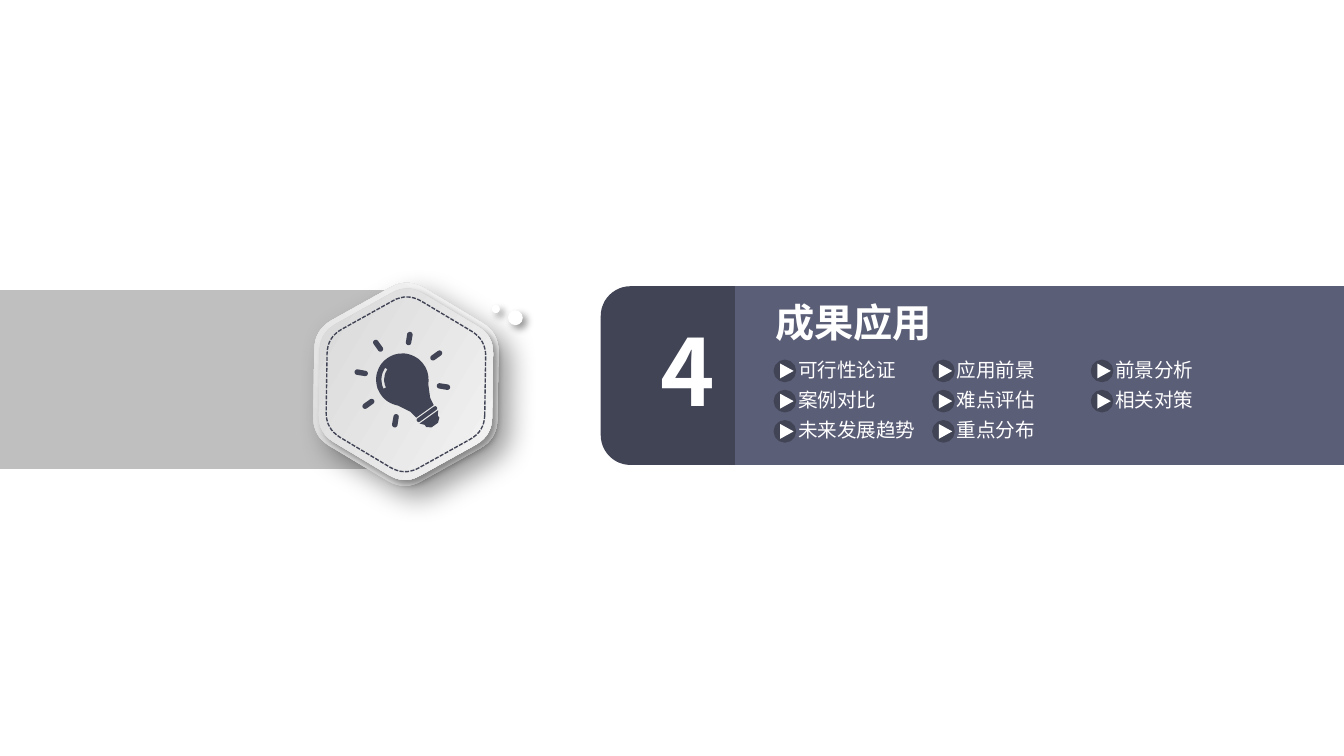
"""Build the section slide with a bulb badge and a numbered topic banner."""
import math
import lxml.etree
import pptx
import pptx.dml.color
import pptx.enum.dml
import pptx.enum.shapes
import pptx.enum.text
import pptx.oxml.ns
import pptx.util
from dataclasses import dataclass

Inches = pptx.util.Inches
Pt = pptx.util.Pt
SHAPE = pptx.enum.shapes.MSO_SHAPE
qn = pptx.oxml.ns.qn


@dataclass(frozen=True)
class Theme:
    font: str = "Noto Sans CJK SC"
    white: str = "FFFFFF"
    grey: str = "BFBFBF"
    dark: str = "414455"
    slate: str = "5B5E77"
    shade: tuple = ("D3D3D3", "F9F9F9")
    shadow: str = "000000"
    number: float = 49.5
    title: float = 21
    body: float = 10.5


def rgb(value):
    return pptx.dml.color.RGBColor.from_string(value)


def arc(cx, cy, radius, start, end, steps=12):
    angles = [math.radians(start + (end - start) * i / steps) for i in range(steps + 1)]
    return [(cx + radius * math.cos(a), cy + radius * math.sin(a)) for a in angles]


def capsule(cx, cy, length, width, angle):
    half = (length - width) / 2
    dx, dy = half * math.cos(math.radians(angle)), half * math.sin(math.radians(angle))
    return (arc(cx + dx, cy + dy, width / 2, angle - 90, angle + 90)
            + arc(cx - dx, cy - dy, width / 2, angle + 90, angle + 270))


def rounded_hexagon(height, trim=0.18, steps=8):
    corners = arc(0, 0, height / math.sqrt(3), 0, 300, 5)
    points = []
    for i, corner in enumerate(corners):
        before, after = corners[i - 1], corners[(i + 1) % 6]
        a, b = ([c + trim * (n - c) for c, n in zip(corner, near)] for near in (before, after))
        for t in (k / steps for k in range(steps + 1)):
            points.append(tuple((1 - t) ** 2 * p + 2 * t * (1 - t) * c + t * t * q
                                for p, c, q in zip(a, corner, b)))
    return points


def bulb():
    y = -0.03
    glass = arc(0, y, 0.195, 135, 405, 48) + [(0.09, 0.2), (0.08, 0.26), (-0.08, 0.26), (-0.09, 0.2)]
    glint = arc(0, y, 0.155, 190, 250) + arc(0, y, 0.135, 250, 190)
    cap = [(-0.085, 0.31), (0.085, 0.31), (0.06, 0.34), (0.06, 0.36),
           (0.03, 0.385), (-0.03, 0.385), (-0.06, 0.36), (-0.06, 0.34)]
    rays = [capsule(*arc(0, y, 0.31, a, a, 1)[0], 0.1, 0.04, a) for a in range(135, 406, 45)]
    return [glass, glint, capsule(0, 0.285, 0.18, 0.03, 0), cap, *rays]


class Deck:
    def __init__(self, prs, theme):
        self.theme = theme
        self.s = prs.slides.add_slide(prs.slide_layouts[6])

    def paint(self, sp, fill=None, line=None, shadow=None, rotation=0, dash=None):
        sp.rotation = rotation
        if fill:
            sp.fill.solid()
            sp.fill.fore_color.rgb = rgb(fill)
        else:
            sp.fill.background()
        if line:
            sp.line.color.rgb = rgb(line[0])
            sp.line.width = Pt(line[1])
            sp.line.dash_style = dash
        else:
            sp.line.fill.background()
        sp.shadow.inherit = False
        if shadow:
            self.cast(sp, *shadow)
        return sp

    def cast(self, sp, blur, distance):
        effects = sp._element.spPr.find(qn("a:effectLst"))
        outer = lxml.etree.SubElement(effects, qn("a:outerShdw"), {
            "blurRad": str(Pt(blur)), "dist": str(Pt(distance)),
            "dir": str(45 * 60000), "algn": "tl", "rotWithShape": "0"})
        color = lxml.etree.SubElement(outer, qn("a:srgbClr"), val=self.theme.shadow)
        lxml.etree.SubElement(color, qn("a:alpha"), val="40000")

    def shape(self, kind, box, fill, **style):
        sp = self.s.shapes.add_shape(kind, *map(Inches, box))
        return self.paint(sp, fill, **style)

    def outline(self, center, contours, **style):
        placed = [[((center[0] + x) * 1000, (center[1] + y) * 1000) for x, y in c] for c in contours]
        builder = self.s.shapes.build_freeform(*placed[0][0], scale=Inches(1) / 1000)
        for i, points in enumerate(placed):
            if i:
                builder.move_to(*points[0])
            builder.add_line_segments(points[1:], close=True)
        return self.paint(builder.convert_to_shape(), **style)

    def gradient(self, sp, angle):
        sp.fill.gradient()
        sp.fill.gradient_angle = angle
        for i, (stop, color) in enumerate(zip(sp.fill.gradient_stops, self.theme.shade)):
            stop.position = i
            stop.color.rgb = rgb(color)

    def text(self, box, text, size, bold=False, inset=(0, 0), align=None):
        tf = self.s.shapes.add_textbox(*map(Inches, box)).text_frame
        x, y = map(Inches, inset)
        frame = {"word_wrap": True, "auto_size": pptx.enum.text.MSO_AUTO_SIZE.SHAPE_TO_FIT_TEXT,
                 "margin_left": x, "margin_right": x, "margin_top": y, "margin_bottom": y}
        for name, value in frame.items():
            setattr(tf, name, value)
        p = tf.paragraphs[0]
        p.alignment = align
        r = p.add_run()
        r.text = text
        for name, value in {"name": self.theme.font, "size": Pt(size), "bold": bold}.items():
            setattr(r.font, name, value)
        r.font.color.rgb = rgb(self.theme.white)
        lxml.etree.SubElement(r._r.get_or_add_rPr(), qn("a:ea"), typeface=self.theme.font)

    def topic(self, x, y, width, text):
        t = self.theme
        self.text((x + 0.17, y, width, 0.19), text, t.body)
        self.shape(SHAPE.OVAL, (x, y + 0.03, 0.14, 0.14), t.dark, line=(t.dark, 2))
        self.shape(SHAPE.ISOSCELES_TRIANGLE, (x + 0.03, y + 0.05, 0.11, 0.1), t.white, rotation=90)

    def badge(self, center):
        t = self.theme
        for height, shadow, angle in ((1.37, (15, 9), 90), (1.29, (4, 3), 0)):
            sp = self.outline(center, [rounded_hexagon(height)], shadow=shadow, rotation=30.9)
            self.gradient(sp, angle)
        self.outline(center, [rounded_hexagon(1.18)], line=(t.dark, 0.75), rotation=30.9,
                     dash=pptx.enum.dml.MSO_LINE.SQUARE_DOT)
        for x, y, size in ((3.66, 2.27, 0.06), (3.78, 2.31, 0.11)):
            self.shape(SHAPE.OVAL, (x, y, size, size), t.white, shadow=(4, 3))
        self.outline((3.01, 2.85), bulb(), fill=t.dark, rotation=324.5)


def main():
    prs = pptx.Presentation()
    prs.slide_width, prs.slide_height = Inches(10), Inches(10 * 9 / 16)
    t = Theme()
    deck = Deck(prs, t)
    deck.shape(SHAPE.RECTANGLE, (0, 2.16, 3.05, 1.33), t.grey)
    deck.badge((3.02, 2.86))
    deck.shape(SHAPE.ROUNDED_RECTANGLE, (4.47, 2.13, 5.37, 1.33), t.dark)
    deck.shape(SHAPE.RECTANGLE, (5.47, 2.13, 4.55, 1.33), t.slate)
    deck.text((4.82, 2.29, 0.3, 0.93), "4", t.number, True, (0.1, 0.05),
              pptx.enum.text.PP_ALIGN.CENTER)
    deck.text((5.71, 2.19, 2.24, 0.43), "成果应用", t.title, True, (0.06, 0.03))
    topics = (("可行性论证", "应用前景", "前景分析"),
              ("案例对比", "难点评估", "相关对策"),
              ("未来发展趋势", "重点分布"))
    widths = (1, 1, 1.24)
    for row, names in enumerate(topics):
        for col, name in enumerate(names):
            deck.topic(5.77 + 1.18 * col, 2.66 + 0.45 * row / 2, widths[col], name)
    prs.save("out.pptx")


if __name__ == "__main__":
    main()
